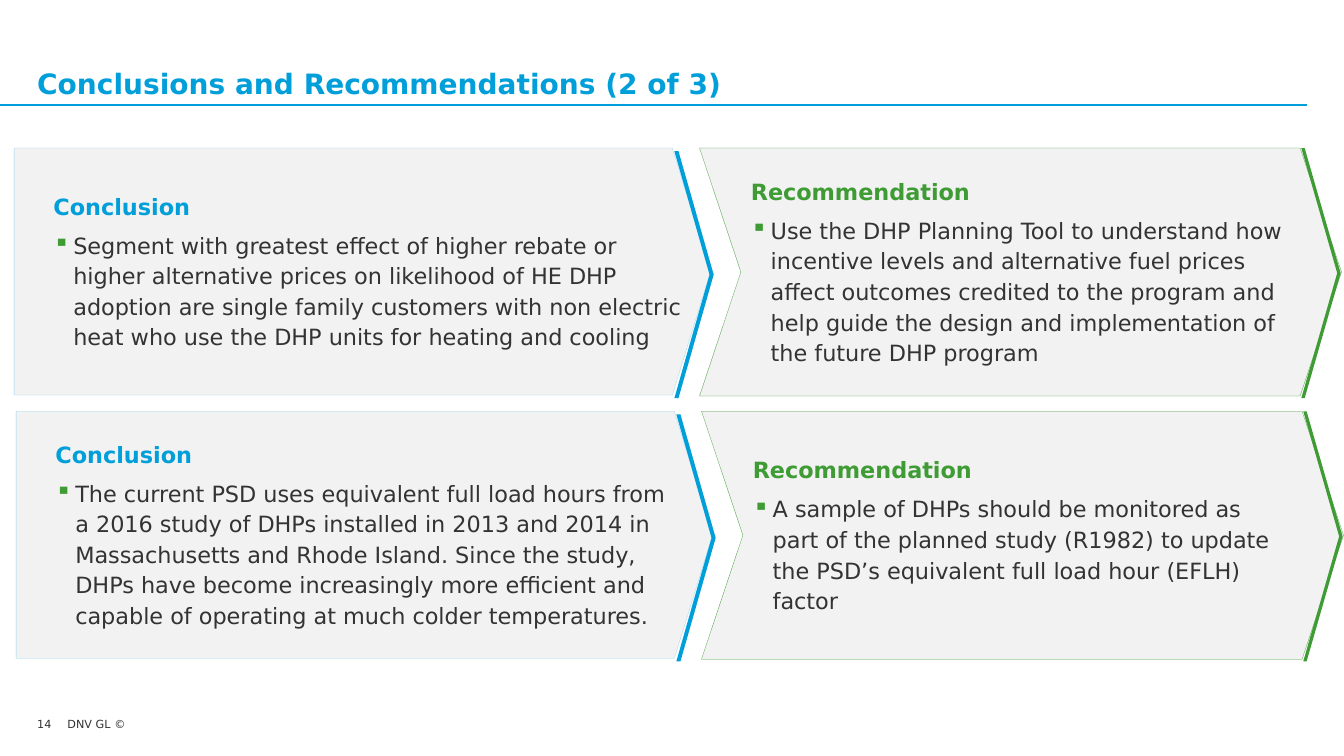
from lxml import etree
from pptx import Presentation
from pptx.dml.color import RGBColor
from pptx.enum.shapes import MSO_CONNECTOR, MSO_SHAPE
from pptx.enum.text import MSO_ANCHOR, PP_ALIGN
from pptx.oxml.ns import qn
from pptx.util import Pt

PLATE, CHEVRON = MSO_SHAPE.PENTAGON, MSO_SHAPE.CHEVRON
STRAIGHT = MSO_CONNECTOR.STRAIGHT
LEFT = PP_ALIGN.LEFT
TOP, MIDDLE, BOTTOM = MSO_ANCHOR.TOP, MSO_ANCHOR.MIDDLE, MSO_ANCHOR.BOTTOM

FONT = "DejaVu Sans"
BLUE, GREEN, PALE = "009FDA", "3F9C35", "99D6F0"
GREY, DARK = "F2F2F2", "333333"

# Left and top of each row, then its conclusion and recommendation
ROWS = [
    (10.1, 105.8,
     "Segment with greatest effect of higher rebate or higher alternative "
     "prices on likelihood of HE DHP adoption are single family customers "
     "with non electric heat who use the DHP units for heating and cooling",
     "Use the DHP Planning Tool to understand how incentive levels and "
     "alternative fuel prices affect outcomes credited to the program and "
     "help guide the design and implementation of the future DHP program"),
    (11.5, 293.8,
     "The current PSD uses equivalent full load hours from a 2016 study of "
     "DHPs installed in 2013 and 2014 in Massachusetts and Rhode Island. "
     "Since the study, DHPs have become increasingly more efficient and "
     "capable of operating at much colder temperatures.",
     "A sample of DHPs should be monitored as part of the planned study "
     "(R1982) to update the PSD’s equivalent full load hour (EFLH) factor"),
]


def color(code):
    return RGBColor.from_string(code)


def add_run(para, text, size, code, bold=False):
    run = para.add_run()
    run.text = text
    font = run.font
    font.name, font.size, font.bold = FONT, Pt(size), bold
    font.color.rgb = color(code)


def set_frame(frame, left, top, right, bottom, anchor, wrap=True):
    frame.margin_left, frame.margin_top = Pt(left), Pt(top)
    frame.margin_right, frame.margin_bottom = Pt(right), Pt(bottom)
    frame.vertical_anchor = anchor
    frame.word_wrap = wrap


def add_label(slide, box, text, size, code, bold=False, anchor=TOP, wrap=True):
    frame = slide.shapes.add_textbox(*map(Pt, box)).text_frame
    set_frame(frame, 0, 0, 0, 0, anchor, wrap)
    add_run(frame.paragraphs[0], text, size, code, bold)


def add_arrow(slide, kind, box, adjust, fill, line=None):
    shape = slide.shapes.add_shape(kind, *map(Pt, box))
    shape.shadow.inherit = False
    shape.adjustments[0] = adjust
    shape.fill.solid()
    shape.fill.fore_color.rgb = color(fill)
    if line:
        shape.line.color.rgb = color(line)
        shape.line.width = Pt(0.2)
    else:
        shape.line.fill.background()
    return shape


def add_bullet(para, code):
    props = para._p.get_or_add_pPr()
    props.set("marL", str(Pt(14.2)))
    props.set("indent", str(-Pt(14.2)))
    tint = etree.SubElement(props, qn("a:buClr"))
    etree.SubElement(tint, qn("a:srgbClr")).set("val", code)
    etree.SubElement(props, qn("a:buChar")).set("char", "▪")


def fill_card(shape, head, body, code, inset):
    frame = shape.text_frame
    set_frame(frame, inset, 3.6, 7.2, 3.6, MIDDLE)
    title = frame.paragraphs[0]
    title.alignment = LEFT
    add_run(title, head, 16, code, True)
    point = frame.add_paragraph()
    add_bullet(point, GREEN)
    point.level = 1
    point.alignment = LEFT
    point.line_spacing = 1.14
    point.space_before = point.space_after = Pt(6)
    add_run(point, body, 16, DARK)


def add_row(slide, left, top, found, advice):
    """Place a conclusion and its recommendation from the row's corner."""
    card = add_arrow(slide, PLATE, (left, top, 497.5, 176.4), 0.155, GREY, PALE)
    fill_card(card, "Conclusion", found, BLUE, 28.1)
    add_arrow(slide, CHEVRON, (left + 471.6, top + 2.2, 28.1, 176.4), 0.895, BLUE)
    card = add_arrow(slide, CHEVRON, (left + 489.6, top, 458.6, 177.1), 0.167,
                     GREY, GREEN)
    fill_card(card, "Recommendation", advice, GREEN, 7.2)
    add_arrow(slide, CHEVRON, (left + 919.4, top, 28.1, 178.6), 0.914, GREEN)


def add_header(slide, left, top, width, height):
    add_label(slide, (left, top, width, height),
              "Conclusions and Recommendations (2 of 3)", 20, BLUE, True, BOTTOM)
    base = Pt(top + height + 3.6)
    rule = slide.shapes.add_connector(STRAIGHT, 0, base, Pt(left + width), base)
    rule.line.color.rgb = color(BLUE)
    rule.line.width = Pt(1.25)
    etree.SubElement(rule._element.spPr, qn("a:effectLst"))


def add_footer(slide, left, top):
    add_label(slide, (left, top, 21.6, 14.4), "14", 8, DARK)
    add_label(slide, (left + 21.6, top, 42.5, 9.4), "DNV GL ©", 8, DARK, wrap=False)


def main():
    deck = Presentation()
    deck.slide_width, deck.slide_height = Pt(960), Pt(540)
    slide = deck.slides.add_slide(deck.slide_layouts[6])
    add_header(slide, 26.6, 18.7, 907.2, 52.6)
    for row in ROWS:
        add_row(slide, *row)
    add_footer(slide, 26.6, 512.6)
    deck.save("out.pptx")


if __name__ == "__main__":
    main()
